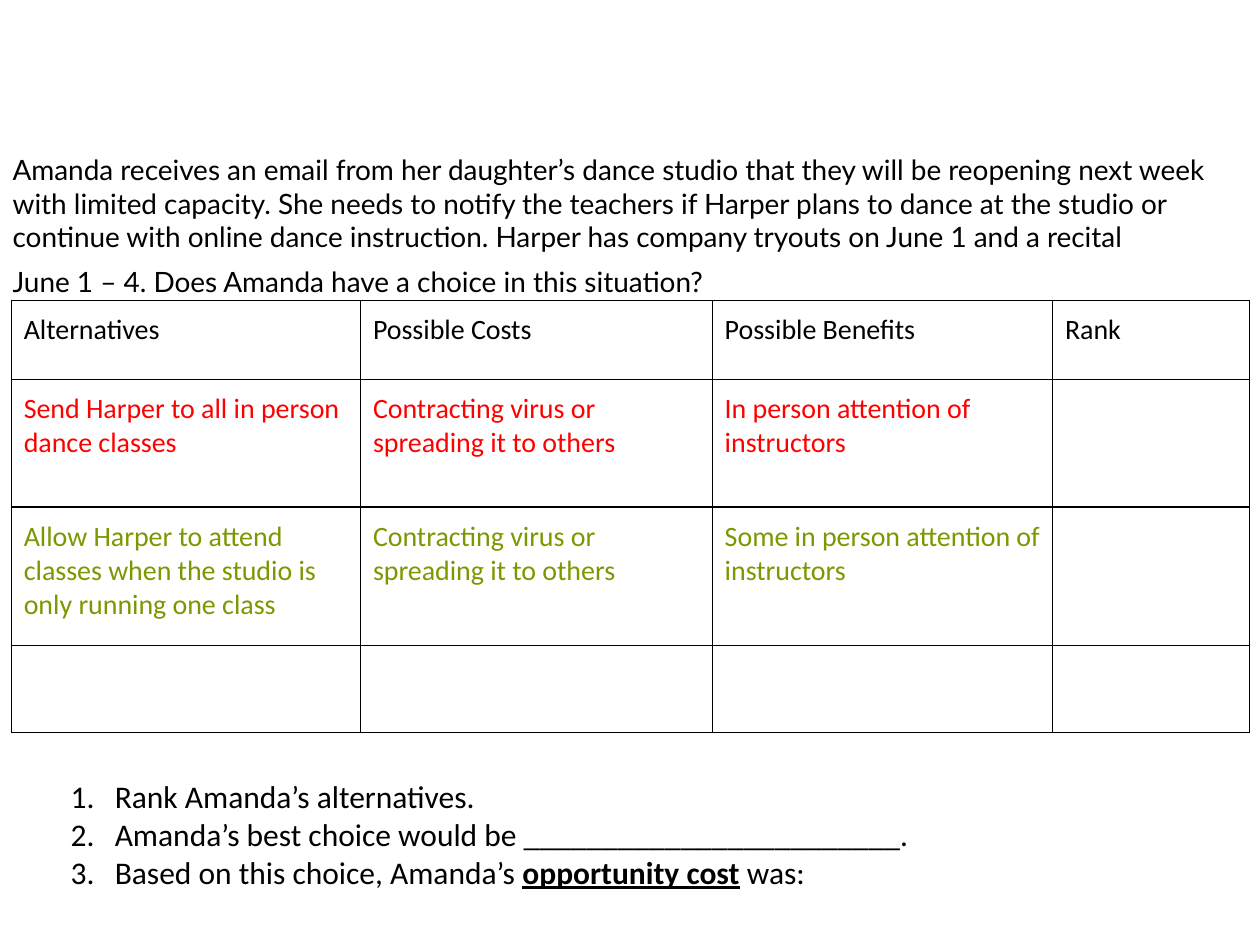
from lxml.etree import SubElement as Sub
from pptx import Presentation
from pptx.dml.color import RGBColor as RGB
from pptx.enum.text import MSO_ANCHOR as Anchor, MSO_AUTO_SIZE as Fit
from pptx.oxml.ns import qn
from pptx.util import Cm, Pt

BLACK = RGB(0, 0, 0)
RED = RGB(0xFF, 0, 0)
GREEN = RGB(0x7A, 0x99, 0)

INTRO = [
    "Amanda receives an email from her daughter’s dance studio that they will be "
    "reopening next week with limited capacity. She needs to notify the teachers if "
    "Harper plans to dance at the studio or continue with online dance instruction. "
    "Harper has company tryouts on June 1 and a recital",
    "June 1 – 4. Does Amanda have a choice in this situation?",
]
TASKS = [
    ["Rank Amanda’s alternatives."],
    ["Amanda’s best choice would be ________________________."],
    ["Based on this choice, Amanda’s ", "opportunity cost", " was:"],
]
KEY = "opportunity cost"

# Column widths and row heights in centimetres
COLS = [7.04, 7.09, 6.86, 3.96]
ROWS = [
    (1.6, BLACK, ["Alternatives", "Possible Costs", "Possible Benefits", "Rank"]),
    (2.57, RED, ["Send Harper to all in person dance classes",
                 "Contracting virus or spreading it to others",
                 "In person attention of instructors", ""]),
    (2.79, GREEN, ["Allow Harper to attend classes when the studio is only running one class",
                   "Contracting virus or spreading it to others",
                   "Some in person attention of instructors", ""]),
    (1.75, BLACK, [""] * 4),
]


def set_font(para, face, size, color=BLACK):
    font = para.font
    font.name, font.size = face, Pt(size)
    font.color.rgb = color


def place(holder, left, top, width, height):
    holder.left, holder.top = Cm(left), Cm(top)
    holder.width, holder.height = Cm(width), Cm(height)
    frame = holder.text_frame
    frame.word_wrap = True
    frame.auto_size = Fit.SHAPE_TO_FIT_TEXT
    frame.vertical_anchor = Anchor.TOP
    return frame


def add_para(frame, num, texts, gap=0, step=None):
    """Add a paragraph, numbered with a hanging indent if step is given."""
    para = frame.add_paragraph() if num else frame.paragraphs[0]
    props = para._p.get_or_add_pPr()
    props.set("marL", str(Cm(1.27) if step else 0))
    props.set("indent", str(-step if step else 0))
    if step:
        Sub(props, qn("a:buFont"), typeface="+mj-lt")
        Sub(props, qn("a:buAutoNum"), type="arabicPeriod")
    else:
        Sub(props, qn("a:buNone"))
    para.space_before = Pt(gap if num else 0)
    for text in texts:
        run = para.add_run()
        run.text = text
        if text == KEY:
            run.font.bold = run.font.underline = True
    return para


def add_lines(cell):
    props = cell._tc.get_or_add_tcPr()
    for side in ("lnL", "lnR", "lnT", "lnB"):
        line = Sub(props, qn(f"a:{side}"), w=str(Pt(0.75)))
        fill = Sub(line, qn("a:solidFill"))
        Sub(fill, qn("a:srgbClr"), val=str(BLACK))


def fill_cell(cell, text, color):
    cell.margin_left = cell.margin_right = Cm(0.25)
    cell.margin_top = cell.margin_bottom = Cm(0.25)
    add_lines(cell)
    cell.fill.background()
    cell.text = text
    set_font(cell.text_frame.paragraphs[0], "Calibri", 16, color)


def add_grid(slide):
    high = sum(row[0] for row in ROWS)
    table = slide.shapes.add_table(len(ROWS), len(COLS), Cm(0.23), Cm(6.05),
                                   Cm(sum(COLS)), Cm(high)).table
    table.first_row = table.horz_banding = False
    for col, width in zip(table.columns, COLS):
        col.width = Cm(width)
    for row, (height, color, texts) in zip(table.rows, ROWS):
        row.height = Cm(height)
        for cell, text in zip(row.cells, texts):
            fill_cell(cell, text, color)


def main():
    deck = Presentation()
    deck.slide_width, deck.slide_height = Cm(25.4), Cm(19.05)
    slide = deck.slides.add_slide(deck.slide_layouts[3])
    title, top, low = slide.placeholders
    title._element.getparent().remove(title._element)

    # Table of alternatives
    add_grid(slide)

    # Situation
    frame = place(top, 0, 2.95, 25.17, 3.2)
    for num, text in enumerate(INTRO):
        set_font(add_para(frame, num, [text], gap=6.4), "Lato", 16)

    # Numbered tasks
    frame = place(low, 0.79, 15.54, 23.04, 2.57)
    for num, texts in enumerate(TASKS):
        set_font(add_para(frame, num, texts, step=Cm(0.89)), "Calibri", 18)

    deck.save("out.pptx")


if __name__ == "__main__":
    main()
